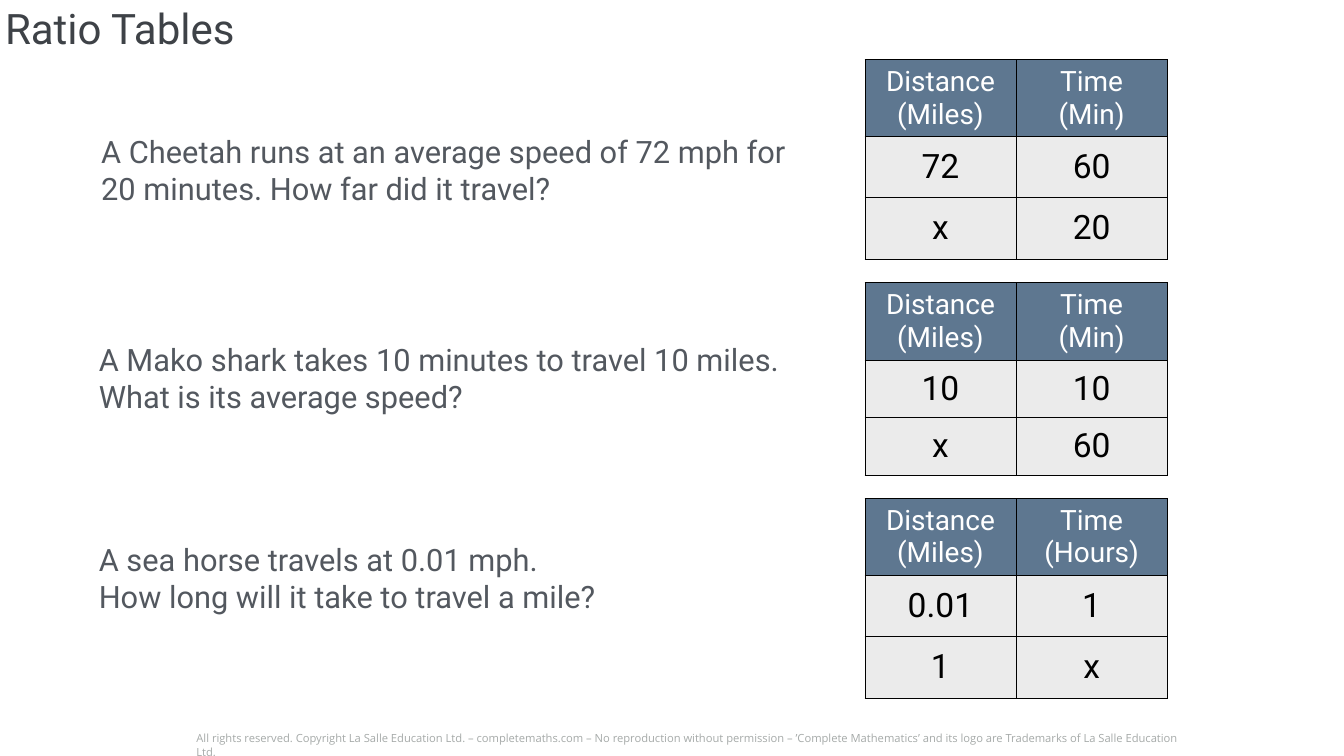
from dataclasses import dataclass

from lxml import etree
from pptx import Presentation
from pptx.dml.color import RGBColor
from pptx.enum.text import MSO_ANCHOR, MSO_AUTO_SIZE, PP_ALIGN
from pptx.oxml.ns import qn
from pptx.slide import Slide
from pptx.table import _Cell
from pptx.text.text import TextFrame
from pptx.util import Cm, Pt

TOP, MIDDLE = MSO_ANCHOR.TOP, MSO_ANCHOR.MIDDLE
LEFT, CENTER = PP_ALIGN.LEFT, PP_ALIGN.CENTER
NO_FIT, GROW = MSO_AUTO_SIZE.NONE, MSO_AUTO_SIZE.SHAPE_TO_FIT_TEXT
TITLE_ONLY = 5


@dataclass(frozen=True)
class TextStyle:
    font: str
    size: int
    color: str
    align: PP_ALIGN = LEFT


@dataclass(frozen=True)
class Theme:
    title: TextStyle = TextStyle("Roboto", 60, "3E4247")
    question: TextStyle = TextStyle("Roboto", 44, "53585F")
    header: TextStyle = TextStyle("Roboto", 40, "FFFFFF", CENTER)
    value: TextStyle = TextStyle("Roboto", 48, "000000", CENTER)
    copyright: TextStyle = TextStyle("Open Sans", 16, "A6AAA9")
    header_fill: str = "5E7790"
    value_fill: str = "EBEBEB"
    border: str = "000000"


@dataclass(frozen=True)
class Box:
    """Position and size in centimetres."""
    left: float
    top: float
    width: float
    height: float


@dataclass(frozen=True)
class Problem:
    question: str
    question_box: Box
    table_top: float
    row_height: float
    rows: tuple[tuple[str, str], ...]


THEME = Theme()
TABLE_LEFT, COLUMN_WIDTH = 43.59, 7.62
COPYRIGHT = (
    "All rights reserved. Copyright La Salle Education Ltd. – completemaths.com – "
    "No reproduction without permission – ’Complete Mathematics’ and its logo are "
    "Trademarks of La Salle Education Ltd."
)
PROBLEMS = (
    Problem(
        "A Cheetah runs at an average speed of 72 mph for 20 minutes. How far did it travel?",
        Box(4.9, 6.45, 35.1, 4.17), 3.0, 3.08,
        (("Distance\n(Miles)", "Time\n(Min)"), ("72", "60"), ("x", "20")),
    ),
    Problem(
        "A Mako shark takes 10 minutes to travel 10 miles.\nWhat is its average speed?",
        Box(4.78, 16.97, 35.1, 4.17), 14.25, 2.9,
        (("Distance\n(Miles)", "Time\n(Min)"), ("10", "10"), ("x", "60")),
    ),
    Problem(
        "A sea horse travels at 0.01 mph.\nHow long will it take to travel a mile?",
        Box(4.78, 27.03, 25.76, 4.17), 25.12, 3.08,
        (("Distance\n(Miles)", "Time\n(Hours)"), ("0.01", "1"), ("1", "x")),
    ),
)


def write_text(text_frame: TextFrame, text: str, style: TextStyle) -> None:
    text_frame.text = text
    for paragraph in text_frame.paragraphs:
        paragraph.alignment = style.align
        for run in paragraph.runs:
            run.font.name = style.font
            run.font.size = Pt(style.size)
            run.font.color.rgb = RGBColor.from_string(style.color)


def add_title(slide: Slide, text: str, box: Box) -> None:
    title = slide.shapes.title
    title.left, title.top = Cm(box.left), Cm(box.top)
    title.width, title.height = Cm(box.width), Cm(box.height)
    text_frame = title.text_frame
    text_frame.auto_size = NO_FIT
    text_frame.vertical_anchor = TOP
    write_text(text_frame, text, THEME.title)


def add_text(slide: Slide, text: str, box: Box, style: TextStyle,
             anchor: MSO_ANCHOR, inset: float) -> None:
    shape = slide.shapes.add_textbox(
        Cm(box.left), Cm(box.top), Cm(box.width), Cm(box.height))
    text_frame = shape.text_frame
    text_frame.word_wrap = True
    text_frame.auto_size = GROW
    text_frame.vertical_anchor = anchor
    text_frame.margin_left = text_frame.margin_right = Cm(inset)
    text_frame.margin_top = text_frame.margin_bottom = Cm(inset)
    write_text(text_frame, text, style)


def set_borders(cell: _Cell) -> None:
    properties = cell._tc.get_or_add_tcPr()
    for index, side in enumerate(("a:lnL", "a:lnR", "a:lnT", "a:lnB")):
        line = etree.Element(qn(side), w=str(Pt(1)))
        fill = etree.SubElement(line, qn("a:solidFill"))
        etree.SubElement(fill, qn("a:srgbClr"), val=THEME.border)
        properties.insert(index, line)


def add_ratio_table(slide: Slide, problem: Problem) -> None:
    row_count, column_count = len(problem.rows), len(problem.rows[0])
    table = slide.shapes.add_table(
        row_count, column_count, Cm(TABLE_LEFT), Cm(problem.table_top),
        Cm(column_count * COLUMN_WIDTH), Cm(row_count * problem.row_height)).table
    for row_index, texts in enumerate(problem.rows):
        table.rows[row_index].height = Cm(problem.row_height)
        is_header = row_index == 0
        fill = THEME.header_fill if is_header else THEME.value_fill
        style = THEME.header if is_header else THEME.value
        for column_index, text in enumerate(texts):
            cell = table.cell(row_index, column_index)
            cell.vertical_anchor = MIDDLE
            cell.margin_left = cell.margin_right = Cm(0.5)
            cell.margin_top = cell.margin_bottom = Cm(0.25)
            cell.fill.solid()
            cell.fill.fore_color.rgb = RGBColor.from_string(fill)
            set_borders(cell)
            write_text(cell.text_frame, text, style)


def main() -> None:
    presentation = Presentation()
    presentation.slide_width, presentation.slide_height = Cm(67.74), Cm(38.1)
    slide = presentation.slides.add_slide(presentation.slide_layouts[TITLE_ONLY])
    add_text(slide, COPYRIGHT, Box(9.65, 36.63, 50.8, 1.3), THEME.copyright, TOP, 0.25)
    add_title(slide, "Ratio Tables", Box(0, 0, 29.21, 2.64))
    for problem in PROBLEMS:
        add_ratio_table(slide, problem)
        add_text(slide, problem.question, problem.question_box, THEME.question, MIDDLE, 0.2)
    presentation.save("out.pptx")


if __name__ == "__main__":
    main()
